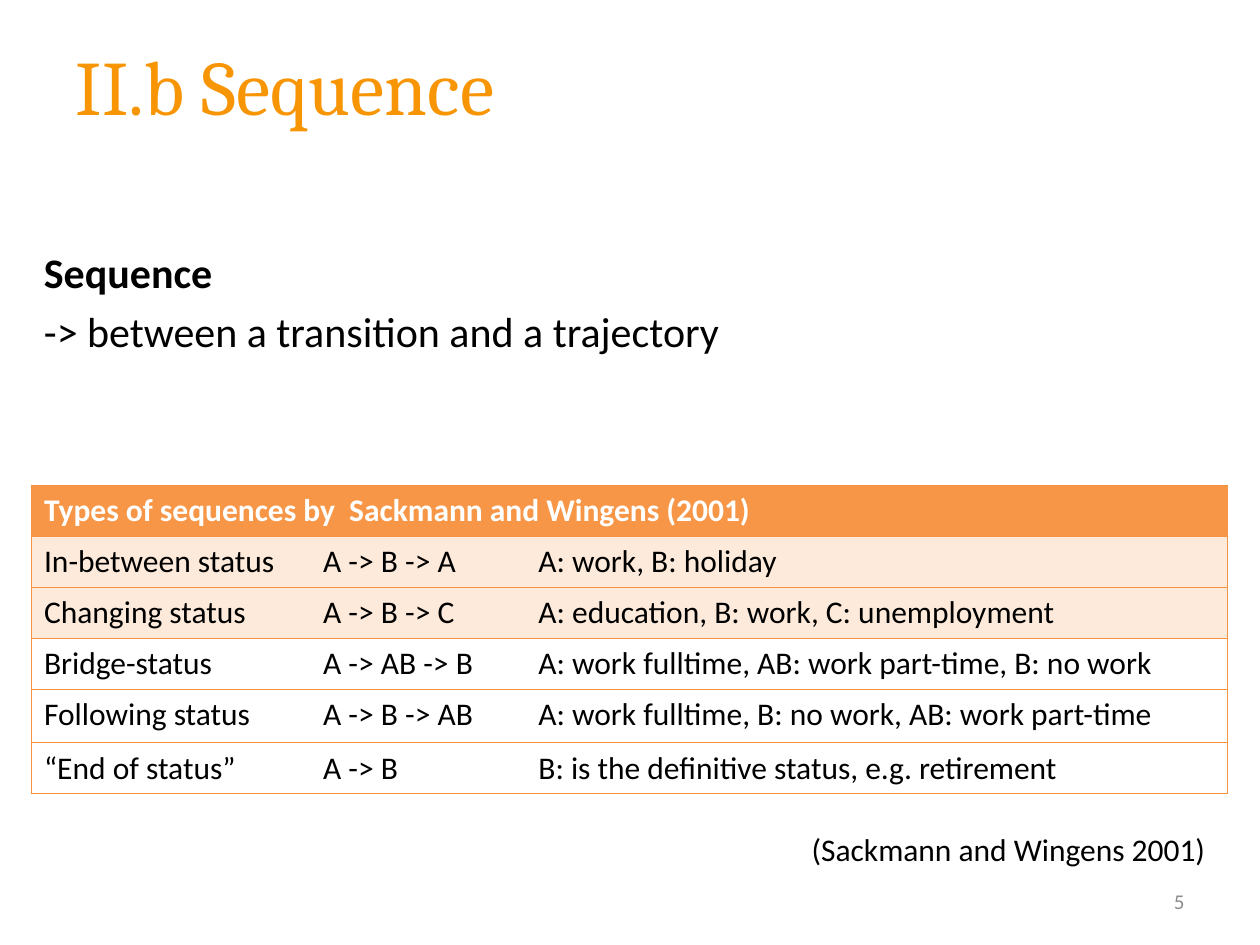
from dataclasses import dataclass

from lxml.etree import SubElement
from pptx import Presentation
from pptx.dml.color import RGBColor
from pptx.enum.text import MSO_ANCHOR, MSO_AUTO_SIZE, PP_ALIGN
from pptx.oxml.ns import qn
from pptx.util import Pt


@dataclass(frozen=True)
class Theme:
    title_font: str = "Cambria"
    body_font: str = "Calibri"
    title_size: int = 44
    lead_size: int = 24
    text_size: int = 18
    number_size: int = 12
    title: str = "F79505"
    text: str = "000000"
    muted: str = "8C8C8C"
    header_fill: str = "F79646"
    header_text: str = "FFFFFF"
    band: str = "FDEADA"
    border: str = "F69240"


theme = Theme()


def style(paragraph, size, color=theme.text, bold=False, face=theme.body_font, align=PP_ALIGN.LEFT):
    paragraph.alignment = align
    font = paragraph.font
    font.name, font.size, font.bold = face, Pt(size), bold
    font.color.rgb = RGBColor.from_string(color)


def add_text(left, top, width, height, text, anchor=MSO_ANCHOR.TOP):
    frame = slide.shapes.add_textbox(Pt(left), Pt(top), Pt(width), Pt(height)).text_frame
    frame.word_wrap = True
    frame.vertical_anchor = anchor
    frame.text = text
    return frame.paragraphs


deck = Presentation()
deck.slide_width, deck.slide_height = Pt(720), Pt(540)
slide = deck.slides.add_slide(deck.slide_layouts[5])

# Title
title = slide.shapes.title
title.left, title.top, title.width, title.height = Pt(36), Pt(3.6), Pt(684), Pt(90)
title.text_frame.text = "II.b Sequence"
title.text_frame.auto_size = MSO_AUTO_SIZE.NONE
title.text_frame.vertical_anchor = MSO_ANCHOR.MIDDLE
style(title.text_frame.paragraphs[0], theme.title_size, theme.title, face=theme.title_font)

# Definition
term, definition = add_text(18, 137.5, 702, 72, "Sequence\n-> between a transition and a trajectory")
style(term, theme.lead_size, bold=True)
style(definition, theme.lead_size)
definition.space_before = Pt(4.8)

# Table of sequence types
rows = [
    ("Types of sequences by  Sackmann and Wingens (2001)", "", ""),
    ("In-between status", "A -> B -> A", "A: work, B: holiday"),
    ("Changing status", "A -> B -> C", "A: education, B: work, C: unemployment"),
    ("Bridge-status", "A -> AB -> B", "A: work fulltime, AB: work part-time, B: no work"),
    ("Following status", "A -> B -> AB", "A: work fulltime, B: no work, AB: work part-time"),
    ("“End of status”", "A -> B", "B: is the definitive status, e.g. retirement"),
]
column_widths = [159.5, 123, 401]
row_heights = [29.2, 29.2, 29.2, 29.2, 30.5, 29.2]
fills = [theme.header_fill, theme.band, theme.band, None, None, None]
types = slide.shapes.add_table(
    len(rows), 3, Pt(18), Pt(277.2), Pt(sum(column_widths)), Pt(sum(row_heights))
).table
types.horz_banding = False
for column, width in zip(types.columns, column_widths):
    column.width = Pt(width)
for row, height in zip(types.rows, row_heights):
    row.height = Pt(height)

last = len(column_widths) - 1
for r, (texts, fill) in enumerate(zip(rows, fills)):
    for c, text in enumerate(texts):
        cell = types.cell(r, c)
        cell.text = text
        style(cell.text_frame.paragraphs[0], theme.text_size,
              theme.text if r else theme.header_text, bold=r == 0)
        # Horizontal rules everywhere, vertical ones only on the outside
        properties = cell._tc.get_or_add_tcPr()
        for edge, shown in (("lnL", c == 0), ("lnR", c == last), ("lnT", True), ("lnB", True)):
            line = SubElement(properties, qn(f"a:{edge}"), w=str(Pt(0.75)))
            if shown:
                paint = SubElement(line, qn("a:solidFill"))
                SubElement(paint, qn("a:srgbClr"), val=theme.border)
            else:
                SubElement(line, qn("a:noFill"))
        if fill:
            cell.fill.solid()
            cell.fill.fore_color.rgb = RGBColor.from_string(fill)
        else:
            cell.fill.background()
types.cell(0, 0).merge(types.cell(0, last))

# Source and page number
source = add_text(336, 470.5, 360, 29, "(Sackmann and Wingens 2001)")[0]
style(source, theme.text_size, align=PP_ALIGN.RIGHT)
page_number = add_text(516, 500.5, 168, 28.8, "5", MSO_ANCHOR.MIDDLE)[0]
style(page_number, theme.number_size, theme.muted, align=PP_ALIGN.RIGHT)

deck.save("out.pptx")
